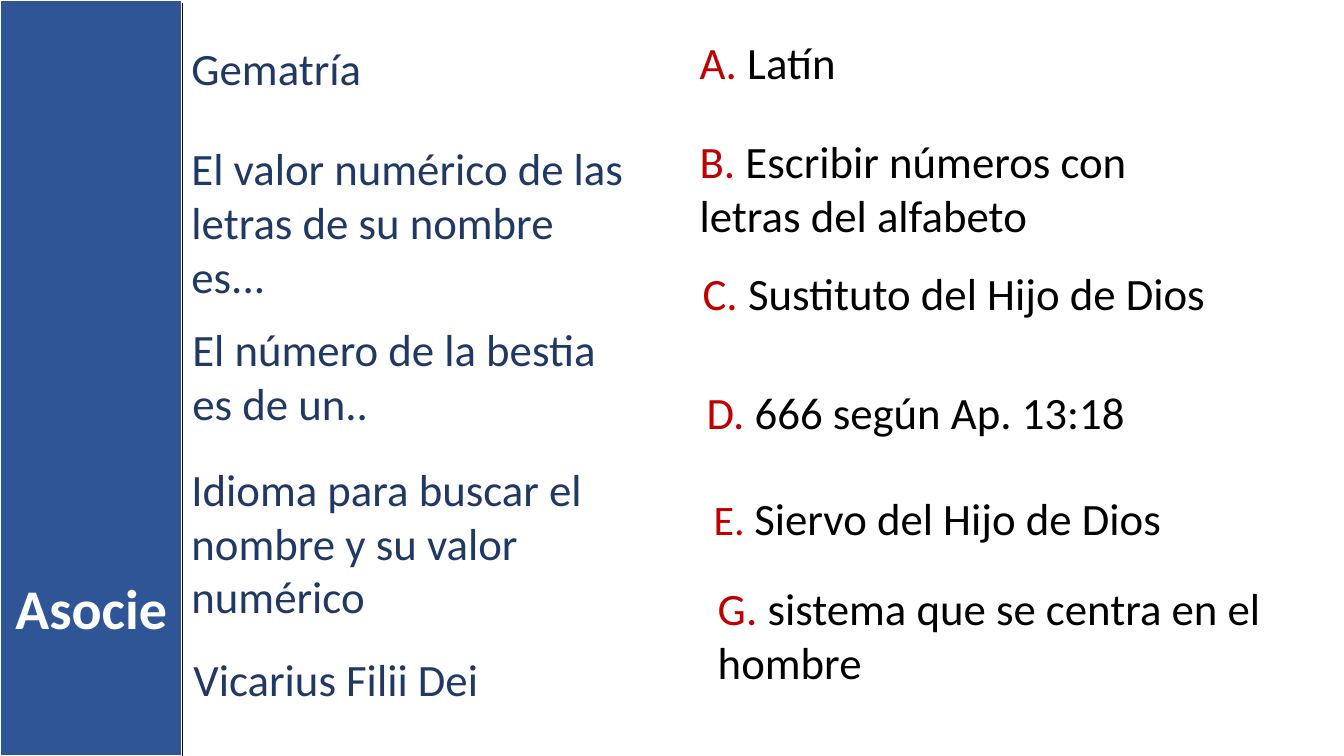
from lxml import etree
from pptx import Presentation
from pptx.dml.color import RGBColor
from pptx.enum.shapes import MSO_CONNECTOR, MSO_SHAPE
from pptx.enum.text import MSO_ANCHOR, MSO_AUTO_SIZE, PP_ALIGN
from pptx.oxml.ns import qn
from pptx.util import Inches, Pt

RECT = MSO_SHAPE.RECTANGLE
STRAIGHT = MSO_CONNECTOR.STRAIGHT
TOP = MSO_ANCHOR.TOP
GROW = MSO_AUTO_SIZE.SHAPE_TO_FIT_TEXT
LEFT, CENTER = PP_ALIGN.LEFT, PP_ALIGN.CENTER

COLORS = {
    "bar": "2F5597",
    "term": "203864",
    "mark": "C00000",
    "black": "000000",
    "white": "FFFFFF",
}
FONT = "Calibri"
BAR = 1.81

TERMS = [
    ("Gematría", 1.8, 0.35, 4.62, 0.64),
    ("El valor numérico de las letras de su nombre es...", 1.8, 1.35, 4.62, 1.72),
    ("El número de la bestia es de un..", 1.81, 3.14, 4.23, 1.18),
    ("Idioma para buscar el nombre y su valor numérico", 1.8, 4.53, 4.61, 1.72),
    ("Vicarius Filii Dei", 1.82, 6.42, 4.77, 0.64),
]
CHOICES = [
    ("A. ", "Latín", 32, 6.84, 0.3, 6.3, 0.64),
    ("B. ", "Escribir números con letras del alfabeto", 32, 6.84, 1.28, 4.52, 1.18),
    ("C. ", "Sustituto del Hijo de Dios", 32, 6.87, 2.59, 5.98, 0.64),
    ("D. ", "666 según Ap. 13:18", 32, 6.91, 3.77, 6.04, 0.64),
    ("E. ", "Siervo del Hijo de Dios", 30, 6.98, 4.82, 5.75, 0.64),
    ("G. ", "sistema que se centra en el hombre", 32, 7.02, 5.71, 5.82, 1.18),
]


def paint(name):
    return RGBColor.from_string(COLORS[name])


def write(para, text, size=32, color="black", bold=False):
    run = para.add_run()
    run.text = text
    run.font.name = FONT
    run.font.size = Pt(size)
    run.font.bold = bold
    run.font.color.rgb = paint(color)


class Board:
    def __init__(self, slide):
        self.slide = slide
        self.shapes = slide.shapes

    def bar(self, x, y, w, h, fill, line, width):
        bar = self.shapes.add_shape(RECT, *map(Inches, (x, y, w, h)))
        bar.shadow.inherit = False
        bar.fill.solid()
        bar.fill.fore_color.rgb = paint(fill)
        bar.line.color.rgb = paint(line)
        bar.line.width = Pt(width)
        return bar

    def frame(self, shape, align):
        frame = shape.text_frame
        frame.word_wrap = True
        frame.auto_size = GROW
        frame.vertical_anchor = TOP
        para = frame.paragraphs[0]
        para.alignment = align
        return para

    def title(self, text, x, y, w, h, back):
        title = self.shapes.title
        title.left, title.top, title.width, title.height = map(Inches, (x, y, w, h))
        back.element.addnext(title.element)
        write(self.frame(title, CENTER), text, size=40, color="white", bold=True)

    def text(self, x, y, w, h):
        box = self.shapes.add_textbox(*map(Inches, (x, y, w, h)))
        return self.frame(box, LEFT)

    def line(self, x1, y1, x2, y2, color, width):
        line = self.shapes.add_connector(STRAIGHT, *map(Inches, (x1, y1, x2, y2)))
        line.line.color.rgb = paint(color)
        line.line.width = Pt(width)
        etree.SubElement(line.element.spPr, qn("a:effectLst"))


def main():
    deck = Presentation()
    deck.slide_width, deck.slide_height = Inches(13.33), Inches(7.5)
    board = Board(deck.slides.add_slide(deck.slide_layouts[5]))

    bar = board.bar(0, 0, BAR, 7.5, "bar", "white", 1.5)
    board.title("Asocie", 0, 5.64, BAR, 0.77, bar)
    for term, *place in TERMS:
        write(board.text(*place), term, color="term")
    for mark, choice, size, *place in CHOICES:
        para = board.text(*place)
        write(para, mark, size=size, color="mark")
        write(para, choice)
    board.line(BAR, 0.03, BAR, 7.5, "black", 1)

    deck.save("out.pptx")


if __name__ == "__main__":
    main()
